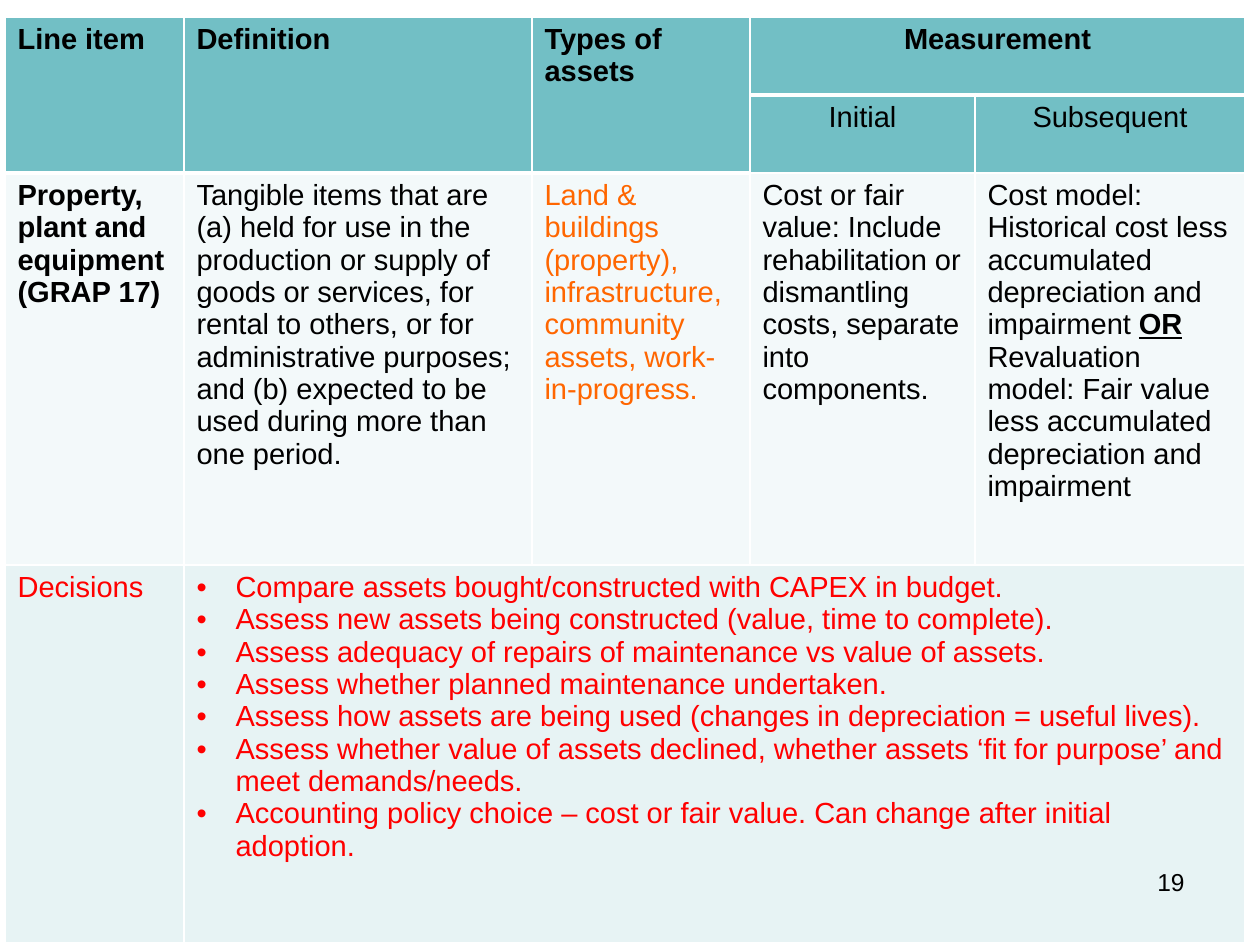
from lxml import etree
from pptx import Presentation, util as u
from pptx.dml.color import RGBColor
from pptx.enum import text
from pptx.oxml.ns import qn

THEME = dict(
    font="Arial", body=16.6, number=14,
    ink="000000", asset="FF6600", decision="FF0000", line="FFFFFF",
    head="72BFC5", light="F3F9FA", tint="E7F3F4",
)
PX = 914400 / 126
COLS = [179, 348, 218, 225, 270]
ROWS = [78, 78, 392, 378]
ROW_FILLS = ["head", "head", "light", "tint"]
MERGES = [((0, 0), (1, 0)), ((0, 1), (1, 1)), ((0, 2), (1, 2)),
          ((0, 3), (0, 4)), ((3, 1), (3, 4))]
THICK_BELOW = {(0, 3), (0, 4), (1, 0), (1, 1), (1, 2)}

BOLD = dict(bold=True)
CENTER = dict(align=text.PP_ALIGN.CENTER)
CELLS = {
    (0, 0): (["Line item"], BOLD),
    (0, 1): (["Definition"], BOLD),
    (0, 2): (["Types of assets"], BOLD),
    (0, 3): (["Measurement"], BOLD | CENTER),
    (1, 3): (["Initial"], CENTER),
    (1, 4): (["Subsequent"], CENTER),
    (2, 0): (["Property, plant and equipment", "(GRAP 17)"], BOLD),
    (2, 1): (["Tangible items that are (a) held for use in the production or "
              "supply of goods or services, for rental to others, or for "
              "administrative purposes; and (b) expected to be used during "
              "more than one period."], {}),
    (2, 2): (["Land & buildings (property), infrastructure, community assets, "
              "work-in-progress."], dict(color="asset")),
    (2, 3): (["Cost or fair value: Include rehabilitation or dismantling "
              "costs, separate into components."], {}),
    (2, 4): (["Cost model: Historical cost less accumulated depreciation and "
              "impairment *OR*",
              "Revaluation model: Fair value less accumulated depreciation "
              "and impairment"], {}),
    (3, 0): (["Decisions"], dict(color="decision")),
    (3, 1): (["Compare assets bought/constructed with CAPEX in budget.",
              "Assess new assets being constructed (value, time to complete).",
              "Assess adequacy of repairs of maintenance vs value of assets.",
              "Assess whether planned maintenance undertaken.",
              "Assess how assets are being used (changes in depreciation = "
              "useful lives).",
              "Assess whether value of assets declined, whether assets ‘fit "
              "for purpose’ and meet demands/needs.",
              "Accounting policy choice – cost or fair value. Can change "
              "after initial adoption."],
             dict(color="decision", bullet=True)),
}


def px(n):
    return u.Emu(round(n * PX))


def rgb(key):
    return RGBColor.from_string(THEME[key])


def write(tf, lines, size="body", color="ink", bold=False, align=None,
          bullet=False):
    for i, line in enumerate(lines):
        p = tf.add_paragraph() if i else tf.paragraphs[0]
        p.alignment = align or text.PP_ALIGN.LEFT
        if bullet:
            pPr = p._p.get_or_add_pPr()
            pPr.set("marL", str(px(39)))
            pPr.set("indent", str(-px(39)))
            etree.SubElement(pPr, qn("a:buFont"), typeface=THEME["font"])
            etree.SubElement(pPr, qn("a:buChar"), char="•")
        for j, part in enumerate(line.split("*")):
            if not part:
                continue
            r = p.add_run()
            r.text = part
            r.font.name = THEME["font"]
            r.font.size = u.Pt(THEME[size])
            r.font.color.rgb = rgb(color)
            r.font.bold = bold or j % 2 == 1
            r.font.underline = j % 2 == 1


def set_borders(cell, top, bottom):
    tcPr = cell._tc.get_or_add_tcPr()
    for i, (side, width) in enumerate(
            [("L", 1), ("R", 1), ("T", top), ("B", bottom)]):
        ln = etree.Element(qn(f"a:ln{side}"), w=str(u.Pt(width)))
        fill = etree.SubElement(ln, qn("a:solidFill"))
        etree.SubElement(fill, qn("a:srgbClr"), val=THEME["line"])
        tcPr.insert(i, ln)


def add_grid(s):
    table = s.shapes.add_table(len(ROWS), len(COLS), px(5), px(17),
                               px(sum(COLS)), px(sum(ROWS))).table
    for col, width in zip(table.columns, COLS):
        col.width = px(width)
    for row, height in zip(table.rows, ROWS):
        row.height = px(height)
    for first, last in MERGES:
        table.cell(*first).merge(table.cell(*last))
    for i, fill in enumerate(ROW_FILLS):
        for j in range(len(COLS)):
            cell = table.cell(i, j)
            cell.fill.solid()
            cell.fill.fore_color.rgb = rgb(fill)
            set_borders(cell, 3 if (i - 1, j) in THICK_BELOW else 1,
                        3 if (i, j) in THICK_BELOW else 1)
            if (i, j) in CELLS:
                lines, style = CELLS[i, j]
                write(cell.text_frame, lines, **style)


def main():
    prs = Presentation()
    prs.slide_width, prs.slide_height = px(1260), px(945)
    s = prs.slides.add_slide(prs.slide_layouts[6])
    add_grid(s)
    tf = s.shapes.add_textbox(px(903), px(861), px(294), px(66)).text_frame
    tf.word_wrap = True
    write(tf, ["19"], size="number", align=text.PP_ALIGN.RIGHT)
    prs.save("out.pptx")


if __name__ == "__main__":
    main()
